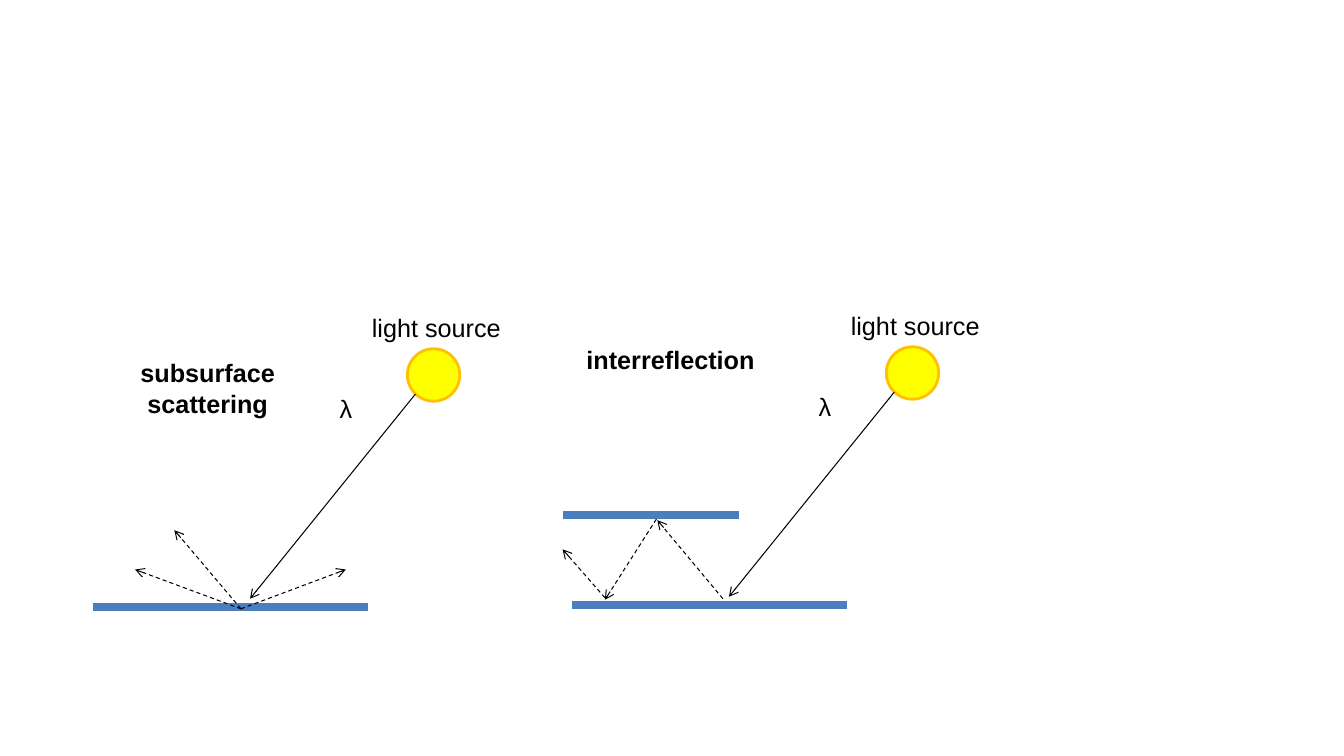
"""Draw two light paths: subsurface scattering and interreflection."""
from lxml.etree import SubElement
from pptx import Presentation
from pptx.dml.color import RGBColor
from pptx.enum.dml import MSO_LINE
from pptx.enum.shapes import MSO_CONNECTOR, MSO_SHAPE
from pptx.enum.text import MSO_AUTO_SIZE, PP_ALIGN
from pptx.oxml.ns import qn
from pptx.util import Inches, Pt

COLORS = {
    "ink": "000000",
    "surface": "4B7EBC",
    "sun": "FFFF00",
    "sun_rim": "FFC000",
}


class LightDiagram:
    def __init__(self, slide):
        self.slide = slide
        self.font = "Arial"
        self.text_size = Pt(18)

    def color(self, name):
        return RGBColor.from_string(COLORS[name])

    def line(self, start, end, color, weight):
        stroke = self.slide.shapes.add_connector(
            MSO_CONNECTOR.STRAIGHT, *map(Inches, (*start, *end)))
        stroke.line.color.rgb = self.color(color)
        stroke.line.width = Pt(weight)
        SubElement(stroke._element.spPr, qn("a:effectLst"))
        return stroke

    def surface(self, left, right, y):
        self.line((left, y), (right, y), "surface", 6)

    def ray(self, start, end, dashed=True):
        beam = self.line(start, end, "ink", 0.75)
        if dashed:
            beam.line.dash_style = MSO_LINE.DASH
        SubElement(beam.line._get_or_add_ln(), qn("a:tailEnd"), type="arrow")

    def sun(self, left, top, size=0.52):
        disc = self.slide.shapes.add_shape(
            MSO_SHAPE.OVAL, *map(Inches, (left, top, size, size)))
        disc.shadow.inherit = False
        disc.fill.solid()
        disc.fill.fore_color.rgb = self.color("sun")
        disc.line.color.rgb = self.color("sun_rim")
        disc.line.width = Pt(2)

    def label(self, text, left, top, width, height, wrap=True, heading=False):
        frame = self.slide.shapes.add_textbox(
            *map(Inches, (left, top, width, height))).text_frame
        frame.word_wrap = wrap
        frame.auto_size = MSO_AUTO_SIZE.SHAPE_TO_FIT_TEXT
        frame.text = text
        paragraph = frame.paragraphs[0]
        paragraph.alignment = PP_ALIGN.CENTER if heading else PP_ALIGN.LEFT
        font = paragraph.runs[0].font
        font.name = self.font
        font.size = self.text_size
        font.bold = heading
        font.color.rgb = self.color("ink")

    def lit_surface(self, x, y):
        self.surface(x, x + 2.73, y)
        self.sun(x + 3.12, y - 2.56)
        self.ray((x + 3.2, y - 2.11), (x + 1.56, y - 0.08), dashed=False)
        self.label("λ", x + 2.35, y - 2.17, 0.33, 0.4, wrap=False)
        self.label("light source", x + 2.67, y - 2.97, 1.5, 0.42)


def main():
    prs = Presentation()
    prs.slide_width, prs.slide_height = Inches(13.33), Inches(7.5)
    diagram = LightDiagram(prs.slides.add_slide(prs.slide_layouts[6]))

    diagram.lit_surface(0.92, 6.02)
    for scattered_end in ((1.73, 5.26), (1.34, 5.65), (3.43, 5.65)):
        diagram.ray((2.39, 6.04), scattered_end)
    diagram.label("subsurface scattering", 1.1, 3.5, 1.92, 0.71, heading=True)

    diagram.lit_surface(5.67, 6)
    diagram.surface(5.58, 7.33, 5.11)
    bounces = (
        ((7.17, 5.94), (6.52, 5.16)),
        ((6.51, 5.15), (6, 5.95)),
        ((6, 5.93), (5.58, 5.45)),
    )
    for start, end in bounces:
        diagram.ray(start, end)
    diagram.label("interreflection", 5.69, 3.37, 1.92, 0.4, heading=True)

    prs.save("out.pptx")


if __name__ == "__main__":
    main()
